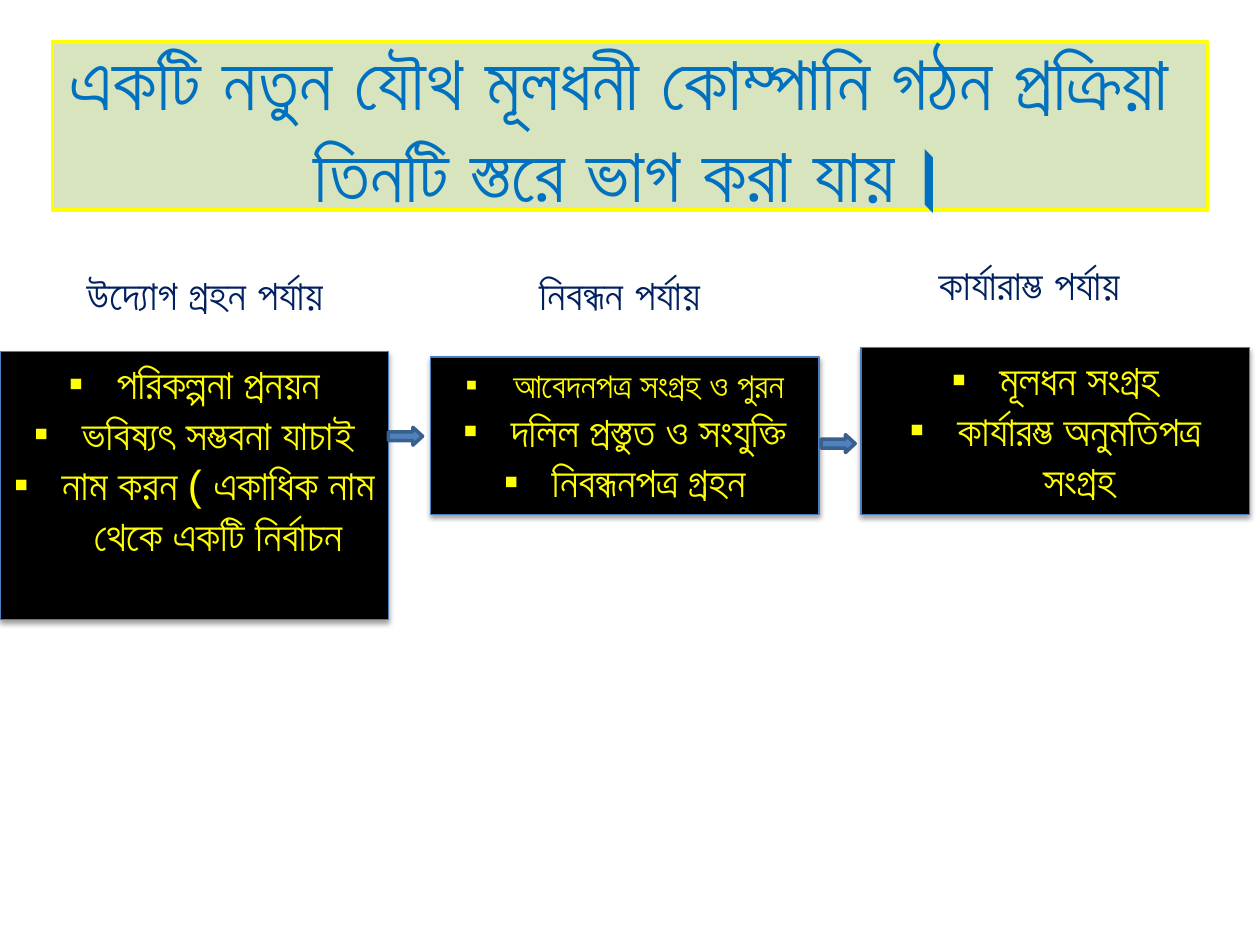
import pptx
import pptx.dml.color
import pptx.enum.shapes
import pptx.enum.text
import pptx.oxml
import pptx.oxml.ns
import pptx.util

RGBColor = pptx.dml.color.RGBColor
SHAPES = pptx.enum.shapes.MSO_SHAPE
ANCHOR = pptx.enum.text.MSO_ANCHOR
CELL = pptx.util.Inches(10) // 120
FONT = "Arial"

WHITE = RGBColor(0xFF, 0xFF, 0xFF)
BLACK = RGBColor(0, 0, 0)
YELLOW = RGBColor(0xFF, 0xFF, 0)
PALE_GREEN = RGBColor(0xD7, 0xE4, 0xBD)
TITLE_BLUE = RGBColor(0, 0x70, 0xC0)
NAVY = RGBColor(0, 0x20, 0x60)
BOX_EDGE = RGBColor(0x4B, 0x7E, 0xBC)
ARROW_FILL = RGBColor(0x4F, 0x81, 0xBD)
ARROW_EDGE = RGBColor(0x3A, 0x5F, 0x8C)

TITLE = ["একটি নতুন যৌথ মূলধনী কোম্পানি গঠন প্রক্রিয়া ", "তিনটি স্তরে ভাগ করা যায়।"]
STAGES = [
    ("উদ্যোগ গ্রহন পর্যায়", (1, 24, 37, 8), (0, 33.5, 37, 25.5),
     [("পরিকল্পনা প্রনয়ন", 24), ("ভবিষ্যৎ সম্ভবনা যাচাই", 24),
      ("নাম করন ( একাধিক নাম থেকে একটি নির্বাচন", 24)]),
    ("নিবন্ধন পর্যায়", (45, 24, 28, 8), (41, 34, 37, 15),
     [("আবেদনপত্র সংগ্রহ ও পুরন", 20), ("দলিল প্রস্তুত ও সংযুক্তি", 24),
      ("নিবন্ধনপত্র গ্রহন", 24)]),
    ("কার্যারাম্ভ পর্যায়", (84, 23, 28, 8), (82, 33.1, 37, 15.9),
     [("মূলধন সংগ্রহ", 24), ("কার্যারম্ভ অনুমতিপত্র সংগ্রহ", 24)]),
]
ARROWS = [(37, 40.7, 3.25, 1.7), (78.2, 41.4, 3.25, 1.7)]


def to_lengths(box):
    """Turn a box in grid cells into slide lengths."""
    return [int(value * CELL) for value in box]


def xml(tag, attributes="", content=""):
    """Make one DrawingML element."""
    namespace = pptx.oxml.ns.nsdecls("a")
    return pptx.oxml.parse_xml(f"<a:{tag} {namespace} {attributes}>{content}</a:{tag}>")


def paint(shape, fill, edge, width):
    """Give a shape a solid fill and an edge."""
    shape.fill.solid()
    shape.fill.fore_color.rgb = fill
    shape.line.color.rgb = edge
    shape.line.width = pptx.util.Pt(width)


def add_shape(slide, kind, box, fill, edge, width):
    """Add a painted preset shape without a shadow."""
    shape = slide.shapes.add_shape(kind, *to_lengths(box))
    shape.shadow.inherit = False
    paint(shape, fill, edge, width)
    return shape


def format_paragraph(paragraph, size, color, bold=False):
    """Centre a paragraph and format its runs."""
    paragraph.alignment = pptx.enum.text.PP_ALIGN.CENTER
    for run in paragraph.runs:
        run.font.name = FONT
        run.font.size = pptx.util.Pt(size)
        run.font.bold = bold
        run.font.color.rgb = color


def fill_title(slide, box):
    """Place the title in a rounded panel."""
    title = slide.shapes.title
    title.left, title.top, title.width, title.height = to_lengths(box)
    title._element.spPr.append(xml("prstGeom", 'prst="roundRect"', "<a:avLst/>"))
    paint(title, PALE_GREEN, YELLOW, 2)
    frame = title.text_frame
    frame.text = "\n".join(TITLE)
    frame.auto_size = pptx.enum.text.MSO_AUTO_SIZE.NONE
    frame.vertical_anchor = ANCHOR.MIDDLE
    for paragraph in frame.paragraphs:
        paragraph.space_before = pptx.util.Pt(0)
        format_paragraph(paragraph, 44, TITLE_BLUE, bold=True)


def add_heading(slide, box, text):
    """Add the heading of a stage."""
    heading = add_shape(slide, SHAPES.RECTANGLE, box, WHITE, WHITE, 2)
    frame = heading.text_frame
    frame.text = text
    frame.vertical_anchor = ANCHOR.MIDDLE
    format_paragraph(frame.paragraphs[0], 24, NAVY, bold=True)


def add_steps(slide, box, steps):
    """Add the shadowed box with the bulleted steps of a stage."""
    panel = add_shape(slide, SHAPES.RECTANGLE, box, BLACK, BOX_EDGE, 0.75)
    effects = panel._element.spPr.find(pptx.oxml.ns.qn("a:effectLst"))
    effects.append(xml(
        "outerShdw", 'blurRad="40000" dist="20000" dir="5400000" rotWithShape="0"',
        f'<a:srgbClr val="{BLACK}"><a:alpha val="38000"/></a:srgbClr>'))
    frame = panel.text_frame
    frame.text = "\n".join(text for text, size in steps)
    frame.vertical_anchor = ANCHOR.TOP
    frame.margin_left = frame.margin_right = pptx.util.Inches(0.11)
    for paragraph, (text, size) in zip(frame.paragraphs, steps):
        properties = paragraph._p.get_or_add_pPr()
        indent = pptx.util.Inches(0.38)
        properties.set("marL", str(indent))
        properties.set("indent", str(-indent))
        properties.append(xml("buFont", 'typeface="Arial"'))
        properties.append(xml("buChar", 'char="▪"'))
        format_paragraph(paragraph, size, YELLOW)
        for run in paragraph.runs:
            run.font._element.insert(0, xml(
                "ln", f'w="{pptx.util.Pt(1.4)}"',
                f'<a:solidFill><a:srgbClr val="{WHITE}"/></a:solidFill>'))


def add_arrow(slide, box):
    """Add an arrow leading to the next stage."""
    arrow = add_shape(slide, SHAPES.RIGHT_ARROW, box, ARROW_FILL, ARROW_EDGE, 2)
    arrow.adjustments[0] = 0.5
    arrow.adjustments[1] = 0.54


def main():
    """Build and save the presentation."""
    presentation = pptx.Presentation()
    presentation.slide_width = 120 * CELL
    presentation.slide_height = 90 * CELL
    slide = presentation.slides.add_slide(presentation.slide_layouts[5])
    fill_title(slide, (5, 4, 110, 16))
    for heading, heading_box, steps_box, steps in STAGES:
        add_heading(slide, heading_box, heading)
        add_steps(slide, steps_box, steps)
    for box in ARROWS:
        add_arrow(slide, box)
    presentation.save("out.pptx")


if __name__ == "__main__":
    main()
